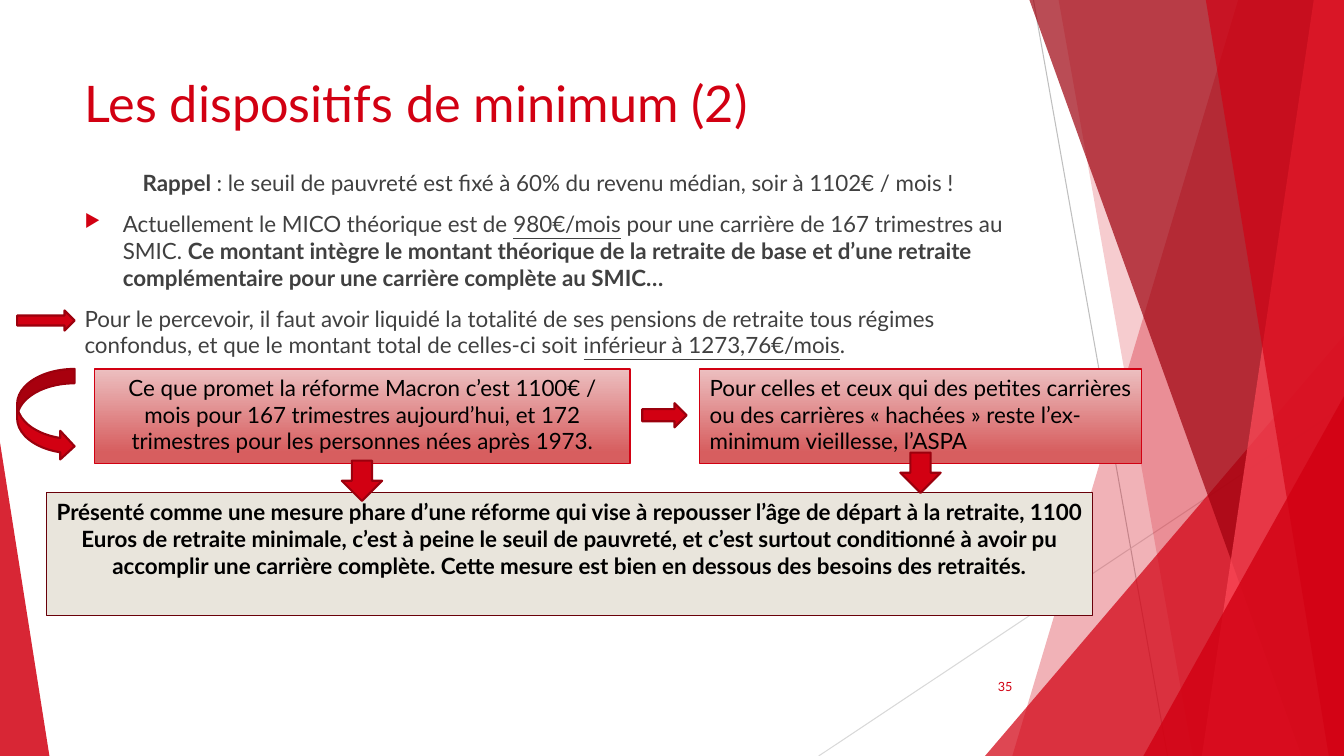
import pptx
import pptx.dml.color
import pptx.enum.shapes
import pptx.enum.text
import pptx.oxml.ns
import pptx.util
from lxml import etree
from pptx.util import Inches

SHAPE = pptx.enum.shapes.MSO_SHAPE
ALIGN = pptx.enum.text.PP_ALIGN
ANCHOR = pptx.enum.text.MSO_ANCHOR
qn = pptx.oxml.ns.qn
WIDTH, HEIGHT = 13.33, 7.5
RED, DARK_RED, GREY, BLACK = "D20012", "9B000D", "404040", "000000"


def color(hex_code):
    return pptx.dml.color.RGBColor.from_string(hex_code)


def paint(shape, fill, opacity=100):
    shape.shadow.inherit = False
    shape.fill.solid()
    shape.fill.fore_color.rgb = color(fill)
    if opacity < 100:
        tint = shape.fill._xPr.find(qn("a:solidFill"))[0]
        etree.SubElement(tint, qn("a:alpha"), val=str(opacity * 1000))


def outline(shape, hex_code, width):
    shape.line.color.rgb = color(hex_code)
    shape.line.width = pptx.util.Pt(width)


def add_ray(slide, start, end, hex_code):
    ray = slide.shapes.add_connector(
        pptx.enum.shapes.MSO_CONNECTOR.STRAIGHT, *map(Inches, start + end))
    outline(ray, hex_code, 0.75)
    etree.SubElement(ray._element.spPr, qn("a:effectLst"))


def add_band(slide, top_left, bottom_left, fill, opacity):
    corners = [(WIDTH, 0), (WIDTH, HEIGHT), (bottom_left, HEIGHT)]
    builder = slide.shapes.build_freeform(Inches(top_left), 0, scale=1.0)
    builder.add_line_segments([(Inches(x), Inches(y)) for x, y in corners])
    band = builder.convert_to_shape()
    paint(band, fill, opacity)
    band.line.fill.background()


def add_wedge(slide, left, top, width, peak, opacity):
    wedge = slide.shapes.add_shape(
        SHAPE.ISOSCELES_TRIANGLE, *map(Inches, (left, top, width, HEIGHT - top)))
    wedge.adjustments[0] = peak
    paint(wedge, RED, opacity)
    wedge.line.fill.background()


def add_arrow(slide, kind, *box):
    arrow = slide.shapes.add_shape(kind, *map(Inches, box))
    paint(arrow, RED)
    outline(arrow, DARK_RED, 1.5)


def write(paragraph, runs, size, hex_code, align=ALIGN.LEFT):
    paragraph.alignment = align
    paragraph.font.name = "Lato"
    paragraph.font.size = pptx.util.Pt(size)
    paragraph.font.color.rgb = color(hex_code)
    for text, style in runs:
        run = paragraph.add_run()
        run.text = text
        if style == "bold":
            run.font.bold = True
        elif style == "underline":
            run.font.underline = True


def add_text(slide, *box, anchor=ANCHOR.TOP):
    frame = slide.shapes.add_textbox(*map(Inches, box)).text_frame
    frame.word_wrap = True
    frame.vertical_anchor = anchor
    return frame


def add_box(slide, box, text, align, style=None):
    panel = slide.shapes.add_shape(SHAPE.RECTANGLE, *map(Inches, box))
    panel.text_frame.word_wrap = True
    panel.text_frame.vertical_anchor = ANCHOR.TOP
    write(panel.text_frame.paragraphs[0], [(text, style)], 16, BLACK, align)
    return panel


def add_promise(slide, left, width, text, align):
    promise = add_box(slide, (left, 3.66, width, 0.94), text, align)
    promise.shadow.inherit = False
    promise.fill.gradient()
    promise.fill.gradient_angle = 270
    stops = [(0, "ECBFC0"), (0.88, "D75E5F")]
    for stop, (position, hex_code) in zip(promise.fill.gradient_stops, stops):
        stop.position = position
        stop.color.rgb = color(hex_code)
    outline(promise, RED, 1)


def add_bullet(paragraph):
    properties = paragraph._p.get_or_add_pPr()
    properties.set("marL", str(Inches(0.38)))
    properties.set("indent", str(-Inches(0.38)))
    bullet_color = etree.Element(qn("a:buClr"))
    etree.SubElement(bullet_color, qn("a:srgbClr"), val=RED)
    marks = [bullet_color,
             etree.Element(qn("a:buSzPct"), val="80000"),
             etree.Element(qn("a:buChar"), char="▶")]
    for mark in marks:
        properties.insert_element_before(mark, "a:tabLst", "a:defRPr", "a:extLst")


def add_backdrop(slide):
    add_ray(slide, (10.25, 0), (11.58, HEIGHT), "BFBFBF")
    add_ray(slide, (WIDTH, 4.03), (8.12, HEIGHT), "D9D9D9")
    add_band(slide, 12.28, 10.04, RED, 30)
    add_band(slide, 10.5, 11.83, RED, 20)
    add_wedge(slide, 9.77, 3.33, 3.56, 1, 72)
    add_band(slide, 10.21, 12.91, "9E000D", 70)
    add_band(slide, 13.03, 11.92, "FF4B5A", 70)
    add_band(slide, 11.96, 13.18, RED, 65)
    add_wedge(slide, 11.34, 3.93, 1.99, 1, 80)
    add_wedge(slide, 0, 4.39, 0.49, 0, 85)


def add_body(slide):
    reminder = [
        ("Rappel ", "bold"),
        (": le seuil de pauvreté est fixé à 60% du revenu médian, soir à 1102€ / mois !", None)]
    mico = [
        ("Actuellement le MICO théorique est de ", None),
        ("980€/mois", "underline"),
        (" pour une carrière de 167 trimestres au SMIC. ", None),
        ("Ce montant intègre le montant théorique de la retraite de base et d’une retraite "
         "complémentaire pour une carrière complète au SMIC…", "bold")]
    condition = [
        ("Pour le percevoir, il faut avoir liquidé la totalité de ses pensions de retraite tous "
         "régimes confondus, et que le montant total de celles-ci soit ", None),
        ("inférieur à 1273,76€/mois", "underline"),
        (".", None)]
    body = add_text(slide, 0.74, 1.63, 9.4, 2.12)
    paragraphs = [body.paragraphs[0], body.add_paragraph(), body.add_paragraph()]
    aligns = [ALIGN.CENTER, ALIGN.LEFT, ALIGN.LEFT]
    for paragraph, runs, align in zip(paragraphs, [reminder, mico, condition], aligns):
        write(paragraph, runs, 16, GREY, align)
        paragraph.space_before = pptx.util.Pt(10)
    add_bullet(paragraphs[1])


def main():
    deck = pptx.Presentation()
    deck.slide_width, deck.slide_height = Inches(WIDTH), Inches(HEIGHT)
    slide = deck.slides.add_slide(deck.slide_layouts[6])
    add_backdrop(slide)

    title = add_text(slide, 0.74, 0.67, 9.4, 0.8)
    write(title.paragraphs[0], [("Les dispositifs de minimum (2)", None)], 36, RED)
    add_body(slide)
    page_number = add_text(slide, 9.39, 6.61, 0.75, 0.4, anchor=ANCHOR.MIDDLE)
    write(page_number.paragraphs[0], [("35", None)], 9, RED, ALIGN.RIGHT)

    add_arrow(slide, SHAPE.RIGHT_ARROW, 0.17, 3.08, 0.57, 0.2)
    add_promise(slide, 0.94, 5.31,
                "Ce que promet la réforme Macron c’est 1100€ / mois pour 167 trimestres "
                "aujourd’hui, et 172 trimestres pour les personnes nées après 1973.",
                ALIGN.CENTER)
    add_arrow(slide, SHAPE.CURVED_RIGHT_ARROW, 0.17, 3.66, 0.57, 0.91)
    add_arrow(slide, SHAPE.RIGHT_ARROW, 6.37, 4, 0.44, 0.24)
    add_promise(slide, 6.94, 4.38,
                "Pour celles et ceux qui des petites carrières ou des carrières « hachées » "
                "reste l’ex-minimum vieillesse, l’ASPA",
                ALIGN.LEFT)
    conclusion = add_box(
        slide, (0.46, 4.89, 10.38, 1.22),
        "Présenté comme une mesure phare d’une réforme qui vise à repousser l’âge de départ à la "
        "retraite, 1100 Euros de retraite minimale, c’est à peine le seuil de pauvreté, et c’est "
        "surtout conditionné à avoir pu accomplir une carrière complète. Cette mesure est bien en "
        "dessous des besoins des retraités.",
        ALIGN.CENTER, "bold")
    paint(conclusion, "E9E5DC")
    outline(conclusion, "690009", 0.75)
    add_arrow(slide, SHAPE.DOWN_ARROW, 3.39, 4.57, 0.4, 0.4)
    add_arrow(slide, SHAPE.DOWN_ARROW, 8.93, 4.49, 0.4, 0.4)
    deck.save("out.pptx")


if __name__ == "__main__":
    main()
